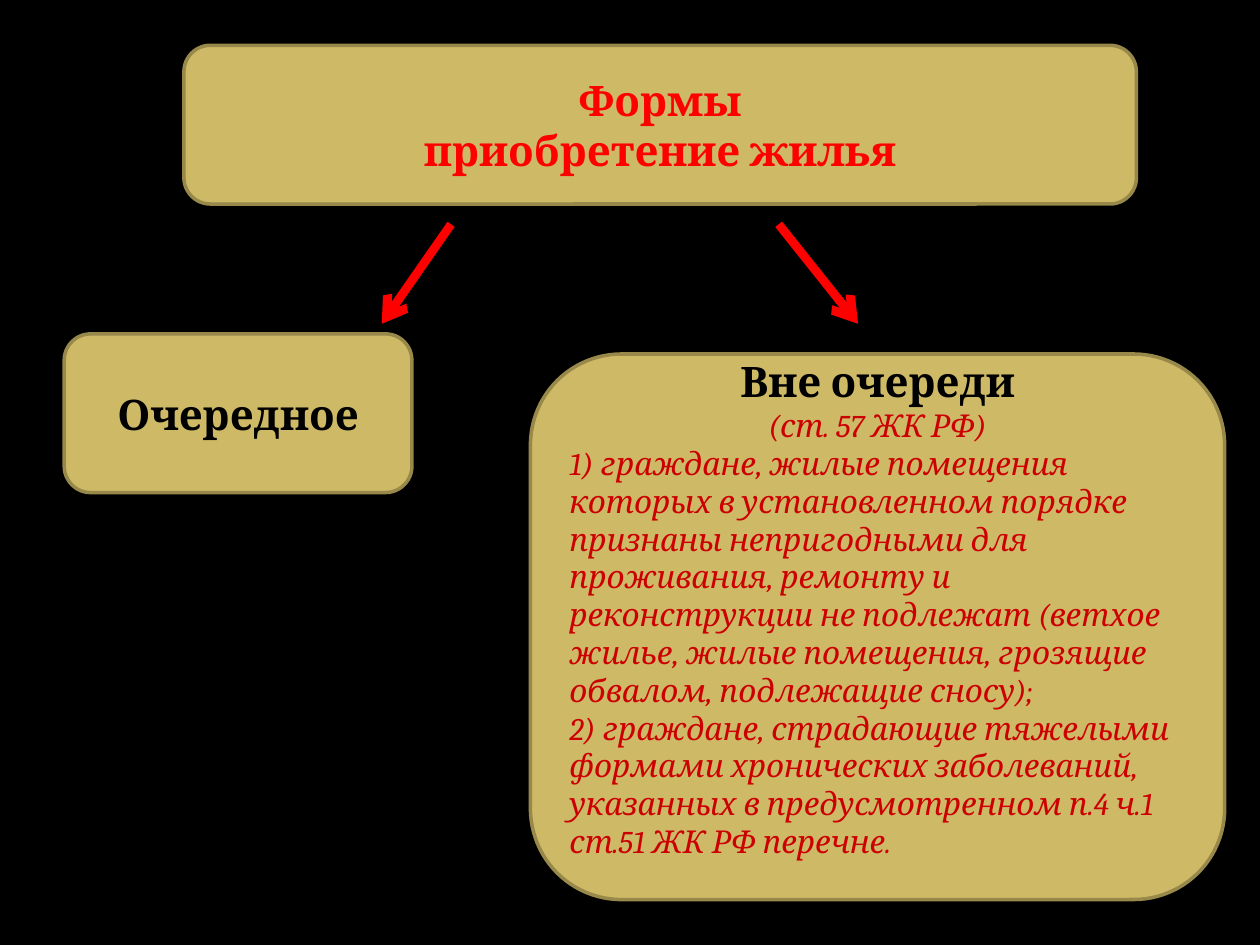
from lxml import etree
from pptx import Presentation
from pptx.dml.color import RGBColor
from pptx.enum.shapes import MSO_CONNECTOR, MSO_SHAPE
from pptx.enum.text import MSO_ANCHOR, PP_ALIGN
from pptx.oxml.ns import qn
from pptx.util import Inches, Pt

ROUNDED = MSO_SHAPE.ROUNDED_RECTANGLE
STRAIGHT = MSO_CONNECTOR.STRAIGHT
MIDDLE = MSO_ANCHOR.MIDDLE
CENTER, LEFT = PP_ALIGN.CENTER, PP_ALIGN.LEFT

FONT = "Cambria"
COLORS = {
    "background": "000000",
    "card": "CEB966",
    "border": "98894B",
    "title": "FF0000",
    "heading": "000000",
    "detail": "CC0000",
    "arrow": "FF0000",
}


def rgb(name):
    return RGBColor.from_string(COLORS[name])


def add_card(slide, left, top, width, height):
    card = slide.shapes.add_shape(
        ROUNDED, Inches(left), Inches(top), Inches(width), Inches(height))
    card.shadow.inherit = False
    card.fill.solid()
    card.fill.fore_color.rgb = rgb("card")
    card.line.color.rgb = rgb("border")
    card.line.width = Pt(2)
    card.text_frame.word_wrap = True
    card.text_frame.vertical_anchor = MIDDLE
    return card.text_frame


def write_lines(frame, lines):
    """Fill a frame from (text, size, colour, heading?, alignment) lines."""
    frame.text = "\n".join(line[0].replace("\v", "\v") for line in lines)
    for paragraph, (_, size, color, heading, align) in zip(frame.paragraphs, lines):
        paragraph.alignment = align
        for run in paragraph.runs:
            run.font.name = FONT
            run.font.size = Pt(size)
            run.font.bold = heading
            run.font.italic = not heading
            run.font.color.rgb = rgb(color)


def add_heading_card(slide, box, texts, color):
    frame = add_card(slide, *box)
    write_lines(frame, [(text, 24, color, True, CENTER) for text in texts])


def add_priority_card(slide, box):
    frame = add_card(slide, *box)
    # Room of one text line under the list
    frame.margin_bottom = Inches(0.35)
    grounds = (
        "1) граждане, жилые помещения которых в установленном порядке признаны "
        "непригодными для проживания, ремонту и реконструкции не подлежат "
        "(ветхое жилье, жилые помещения, грозящие обвалом, подлежащие сносу);\v"
        "2) граждане, страдающие тяжелыми формами хронических заболеваний, "
        "указанных в предусмотренном п.4 ч.1 ст.51 ЖК РФ перечне."
    )
    write_lines(frame, [
        ("Вне очереди", 24, "heading", True, CENTER),
        ("(ст. 57 ЖК РФ)", 18, "detail", False, CENTER),
        (grounds, 18, "detail", False, LEFT),
    ])


def add_arrow(slide, start_x, end_x, top, bottom):
    arrow = slide.shapes.add_connector(
        STRAIGHT, Inches(start_x), Inches(top), Inches(end_x), Inches(bottom))
    arrow.line.color.rgb = rgb("arrow")
    arrow.line.width = Pt(5)
    etree.SubElement(arrow.line._get_or_add_ln(), qn("a:tailEnd"), type="arrow")
    etree.SubElement(arrow._element.spPr, qn("a:effectLst"))


def build_slide(prs):
    slide = prs.slides.add_slide(prs.slide_layouts[6])
    slide.background.fill.solid()
    slide.background.fill.fore_color.rgb = rgb("background")

    # Title
    add_heading_card(slide, (1.46, 0.36, 7.56, 1.26),
                     ["Формы", "приобретение жилья"], "title")

    # Arrows to the two forms
    for start_x, end_x in ((3.58, 3.03), (6.18, 6.81)):
        add_arrow(slide, start_x, end_x, 1.78, 2.57)

    # The two forms
    add_heading_card(slide, (0.51, 2.65, 2.76, 1.26), ["Очередное"], "heading")
    add_priority_card(slide, (4.21, 2.81, 5.51, 4.33))


def main():
    prs = Presentation()
    prs.slide_width, prs.slide_height = Inches(10), Inches(7.5)
    build_slide(prs)
    prs.save("out.pptx")


if __name__ == "__main__":
    main()
